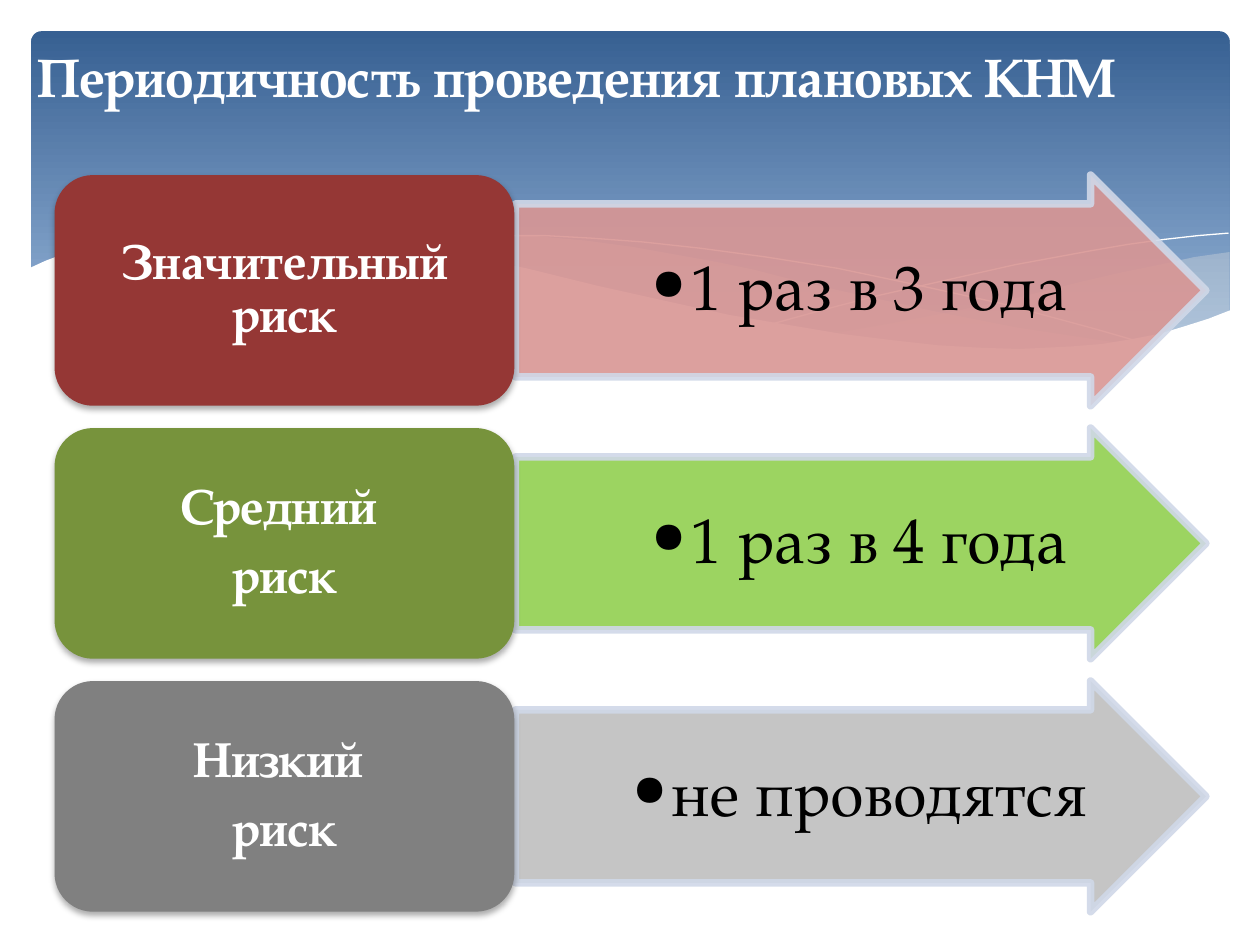
"""Build the slide on how often planned inspections take place."""
import dataclasses
import typing

import lxml.etree
import pptx
import pptx.dml.color
import pptx.enum.shapes
import pptx.enum.text
import pptx.oxml.ns
import pptx.util

Cm = pptx.util.Cm
Pt = pptx.util.Pt
RGBColor = pptx.dml.color.RGBColor
Kind = pptx.enum.shapes.MSO_SHAPE
Align = pptx.enum.text.PP_ALIGN
Anchor = pptx.enum.text.MSO_ANCHOR
qn = pptx.oxml.ns.qn

FONT = "TeX Gyre Pagella"
UNIT = Cm(2.54) / 100
WHITE = RGBColor(0xFF, 0xFF, 0xFF)
BLACK = RGBColor(0, 0, 0)
NAVY = RGBColor(0x37, 0x60, 0x92)
SKY = RGBColor(0x95, 0xB3, 0xD7)
CREAM = RGBColor(0xEE, 0xEC, 0xE1)
EDGE = RGBColor(0xD0, 0xD8, 0xE8)
RED = RGBColor(0x95, 0x37, 0x35)
ROSE = RGBColor(0xD9, 0x96, 0x94)
OLIVE = RGBColor(0x77, 0x93, 0x3C)
LIME = RGBColor(0x92, 0xD0, 0x50)
GREY = RGBColor(0x80, 0x80, 0x80)
SILVER = RGBColor(0xBF, 0xBF, 0xBF)

TOP, PITCH, HEIGHT = 3.53, 5.1, 4.65


class Wave(typing.NamedTuple):
    points: tuple
    color: RGBColor
    alpha: int = 100
    filled: bool = True


@dataclasses.dataclass
class Risk:
    lines: tuple
    term: str
    dark: RGBColor
    light: RGBColor


WAVES = (
    Wave(((976, 200), (948, 204), (921, 210), (891, 216), (861, 223), (805, 237),
          (753, 248), (706, 257), (661, 265), (691, 269), (719, 272),
          (757, 276), (803, 278), (844, 277), (881, 273), (913, 267),
          (942, 259), (976, 247)), CREAM, 29),
    Wave(((893, 273), (866, 269), (807, 260), (741, 247), (668, 231),
          (629, 222), (598, 214), (569, 208), (541, 203), (502, 196),
          (465, 191), (420, 187), (380, 185), (344, 186), (313, 188),
          (286, 191), (323, 196), (362, 203), (404, 211), (449, 222),
          (530, 240), (584, 252), (634, 261), (680, 268), (722, 274),
          (761, 277), (796, 278), (828, 278), (857, 277)), CREAM, 40),
    Wave(((309, 195), (328, 192), (353, 189), (387, 187), (433, 187),
          (469, 189), (510, 192), (556, 197), (608, 204), (665, 213),
          (727, 226), (795, 241), (869, 261), (907, 272)), WHITE, filled=False),
    Wave(((613, 257), (653, 246), (695, 235), (748, 223), (806, 210),
          (866, 199), (895, 194), (924, 190), (951, 187), (975, 185)),
         WHITE, filled=False),
    Wave(((977, 246), (959, 253), (940, 259), (920, 265), (899, 269),
          (875, 273), (850, 275), (809, 277), (778, 276), (744, 274),
          (708, 270), (668, 265), (626, 258), (579, 250), (529, 239),
          (475, 227), (418, 213), (365, 202), (316, 194), (271, 188),
          (230, 185), (193, 184), (161, 184), (132, 186), (106, 189),
          (85, 193), (67, 197), (52, 201), (36, 207), (23, 213),
          (23, 329), (977, 329)), WHITE),
)

RISKS = (
    Risk(("Значительный риск",), "1 раз в 3 года", RED, ROSE),
    Risk(("Средний ", "риск"), "1 раз в 4 года", OLIVE, LIME),
    Risk(("Низкий ", "риск"), "не проводятся", GREY, SILVER),
)


def fade(shape, alpha: int) -> None:
    """Set the opacity of every colour of a shape in percent."""
    for color in shape.element.spPr.iter(qn("a:srgbClr")):
        lxml.etree.SubElement(color, qn("a:alpha"), val=str(alpha * 1000))


def cast(shape) -> None:
    """Give a shape a soft shadow below it."""
    effects = shape.element.spPr.find(qn("a:effectLst"))
    shadow = lxml.etree.SubElement(
        effects, qn("a:outerShdw"), blurRad=str(Pt(3.5)), dist=str(Pt(2.2)),
        dir="5400000", rotWithShape="0")
    color = lxml.etree.SubElement(shadow, qn("a:srgbClr"), val=str(BLACK))
    lxml.etree.SubElement(color, qn("a:alpha"), val="32000")


def write(par, text: str, size: float, color: RGBColor, bold: bool = False) -> None:
    """Add one run to a paragraph."""
    run = par.add_run()
    run.text = text
    font = run.font
    font.name, font.size, font.bold = FONT, Pt(size), bold
    font.color.rgb = color


def setup(shape, left: float, right: float, edge: float):
    """Prepare the text frame of a shape with insets in centimetres."""
    frame = shape.text_frame
    frame.word_wrap = True
    frame.vertical_anchor = Anchor.MIDDLE
    frame.margin_left, frame.margin_right = Cm(left), Cm(right)
    frame.margin_top = frame.margin_bottom = Cm(edge)
    return frame


def center(par, after: float) -> None:
    """Centre a paragraph and set its spacing."""
    par.alignment = Align.CENTER
    par.line_spacing = 0.9
    par.space_after = Pt(after)


def block(slide, kind, left: float, top: float, width: float, height: float):
    """Add a preset shape without shadow or line."""
    shape = slide.shapes.add_shape(kind, Cm(left), Cm(top), Cm(width), Cm(height))
    shape.shadow.inherit = False
    shape.line.fill.background()
    return shape


def panel(slide) -> None:
    """Draw the blue gradient panel."""
    shape = block(slide, Kind.ROUNDED_RECTANGLE, 0.63, 0.63, 24.16, 6.86)
    shape.adjustments[0] = 0.03
    shape.fill.gradient()
    shape.fill.gradient_angle = 270
    for stop, color, place in zip(shape.fill.gradient_stops, (NAVY, SKY), (0, 0.9)):
        stop.color.rgb = color
        stop.position = place


def ripple(slide, wave: Wave) -> None:
    """Draw one wave as a filled outline or a thin line."""
    first, *rest = wave.points
    pen = slide.shapes.build_freeform(*first, scale=UNIT)
    pen.add_line_segments(rest, close=wave.filled)
    shape = pen.convert_to_shape()
    shape.shadow.inherit = False
    paint, blank = shape.fill, shape.line.fill
    if not wave.filled:
        paint, blank = blank, paint
        shape.line.width = Pt(0)
    paint.solid()
    paint.fore_color.rgb = wave.color
    blank.background()
    if wave.alpha < 100:
        fade(shape, wave.alpha)


def arrow(slide, risk: Risk, top: float) -> None:
    """Draw the arrow that holds the term."""
    shape = block(slide, Kind.RIGHT_ARROW, 10.39, top, 13.92, HEIGHT)
    shape.adjustments[0], shape.adjustments[1] = 0.75, 0.5
    shape.fill.solid()
    shape.fill.fore_color.rgb = risk.light
    shape.line.color.rgb = EDGE
    shape.line.width = Pt(4.33)
    fade(shape, 90)
    par = setup(shape, 1.78, 0.08, 0.08).paragraphs[0]
    center(par, 5)
    props = par._p.get_or_add_pPr()
    props.set("marL", str(Cm(0.79)))
    props.set("indent", str(Cm(-0.79)))
    lxml.etree.SubElement(props, qn("a:buFont"), typeface=FONT)
    lxml.etree.SubElement(props, qn("a:buChar"), char="•")
    write(par, risk.term, 36, BLACK)


def card(slide, risk: Risk, top: float) -> None:
    """Draw the rounded card that names the risk."""
    shape = block(slide, Kind.ROUNDED_RECTANGLE, 1.1, top, 9.27, HEIGHT)
    shape.fill.solid()
    shape.fill.fore_color.rgb = risk.dark
    cast(shape)
    frame = setup(shape, 0.08, 0.08, 0)
    for rank, line in enumerate(risk.lines):
        par = frame.add_paragraph() if rank else frame.paragraphs[0]
        center(par, 9)
        write(par, line, 28, WHITE, True)


def main() -> None:
    """Build and save the deck."""
    deck = pptx.Presentation()
    deck.slide_width, deck.slide_height = Cm(25.4), Cm(19.05)
    slide = deck.slides.add_slide(deck.slide_layouts[6])
    panel(slide)
    for wave in WAVES:
        ripple(slide, wave)
    for rank, risk in enumerate(RISKS):
        top = TOP + rank * PITCH
        arrow(slide, risk, top)
        card(slide, risk, top)
    title = slide.shapes.add_textbox(Cm(0.51), Cm(0.74), Cm(24.89), Cm(1.57))
    title.text_frame.word_wrap = True
    write(title.text_frame.paragraphs[0], "Периодичность проведения плановых КНМ", 31, WHITE, True)
    deck.save("out.pptx")


if __name__ == "__main__":
    main()
